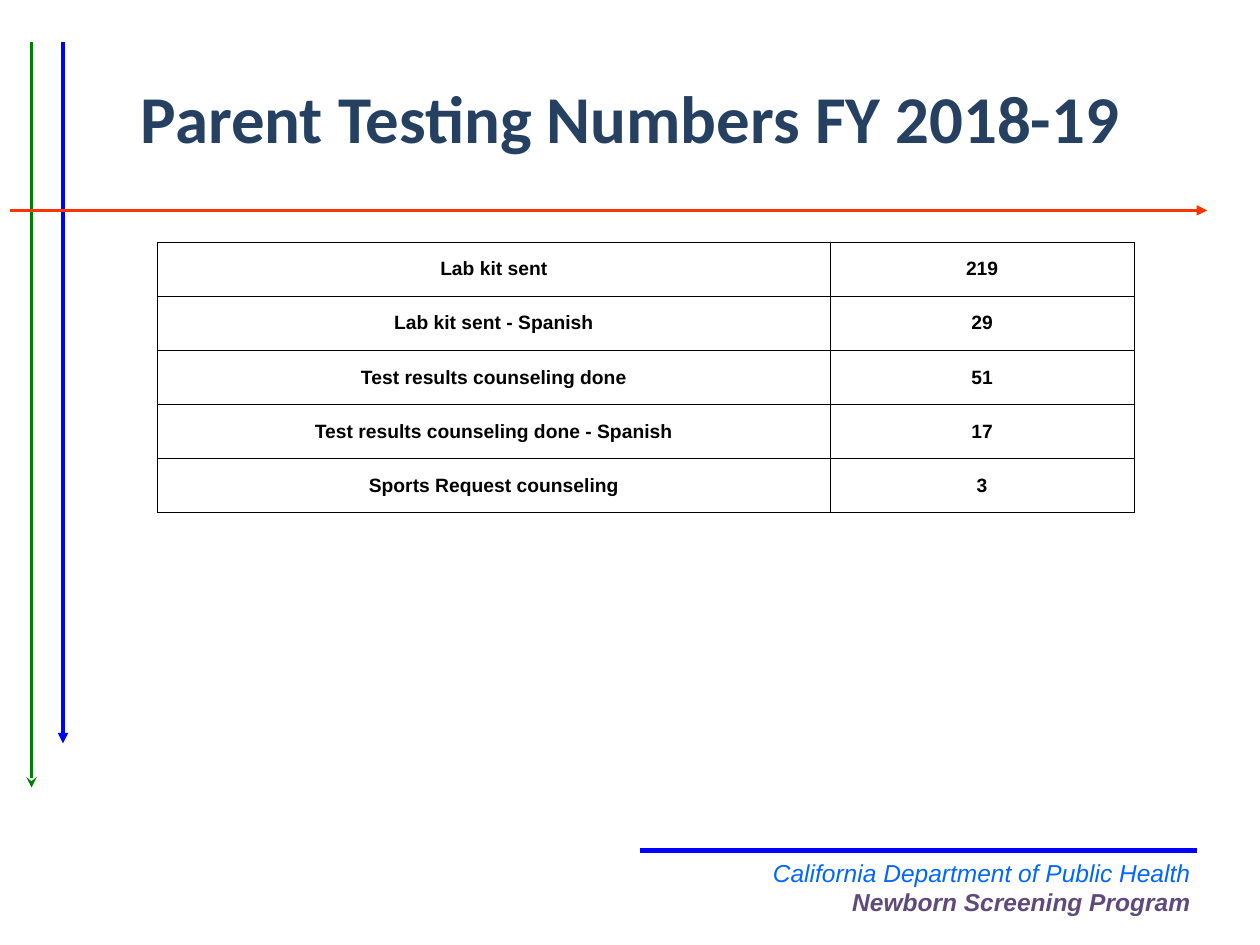
from dataclasses import dataclass

from lxml.etree import SubElement
from pptx import Presentation
from pptx.dml.color import RGBColor
from pptx.enum.shapes import MSO_CONNECTOR
from pptx.enum.text import MSO_ANCHOR, PP_ALIGN
from pptx.oxml.ns import qn
from pptx.util import Inches, Pt


@dataclass(frozen=True)
class Theme:
    heading_font: str = "Calibri"
    body_font: str = "Arial"
    title_size: float = 38.2
    footer_size: float = 14
    table_size: float = 11
    border_width: float = 0.5
    navy: str = "254061"
    green: str = "008000"
    blue: str = "0000FF"
    red: str = "FF3300"
    sky: str = "0066FF"
    purple: str = "604A7B"
    black: str = "000000"


class SlideBuilder:
    def __init__(self, slide, theme):
        self.slide = slide
        self.theme = theme

    def style(self, run, font, size, color, bold=False, italic=False):
        f = run.font
        f.name, f.size, f.bold, f.italic = font, Pt(size), bold, italic
        f.color.rgb = RGBColor.from_string(color)

    def set_margins(self, tf, inset):
        tf.margin_left = tf.margin_right = Inches(inset)
        tf.margin_top = tf.margin_bottom = Inches(inset)

    def line(self, x1, y1, x2, y2, color, width, arrow=None):
        cxn = self.slide.shapes.add_connector(
            MSO_CONNECTOR.STRAIGHT, Inches(x1), Inches(y1), Inches(x2), Inches(y2))
        cxn.line.width = Pt(width)
        cxn.line.color.rgb = RGBColor.from_string(color)
        if arrow:
            SubElement(cxn.line._get_or_add_ln(), qn("a:tailEnd"), type=arrow)
        SubElement(cxn._element.spPr, qn("a:effectLst"))

    def title(self, text, left, top, width, height):
        t = self.theme
        sp = self.slide.shapes.title
        sp.left, sp.top = Inches(left), Inches(top)
        sp.width, sp.height = Inches(width), Inches(height)
        tf = sp.text_frame
        tf.text = text
        tf.vertical_anchor = MSO_ANCHOR.MIDDLE
        self.set_margins(tf, 0.05)
        p = tf.paragraphs[0]
        p.alignment = PP_ALIGN.CENTER
        self.style(p.runs[0], t.heading_font, t.title_size, t.navy, bold=True)

    def footer(self, department, program, left, top, width, height):
        t = self.theme
        sp = self.slide.shapes.add_textbox(
            Inches(left), Inches(top), Inches(width), Inches(height))
        tf = sp.text_frame
        tf.word_wrap = True
        self.set_margins(tf, 0.05)
        p = tf.paragraphs[0]
        p.text = f"{department}\v{program}"
        p.alignment = PP_ALIGN.RIGHT
        first, second = p.runs
        self.style(first, t.body_font, t.footer_size, t.sky, italic=True)
        self.style(second, t.body_font, t.footer_size, t.purple, bold=True, italic=True)

    def border(self, cell):
        tc_pr = cell._tc.get_or_add_tcPr()
        for i, side in enumerate(("a:lnL", "a:lnR", "a:lnT", "a:lnB")):
            ln = SubElement(tc_pr, qn(side), w=str(Pt(self.theme.border_width)))
            tc_pr.insert(i, ln)
            fill = SubElement(ln, qn("a:solidFill"))
            SubElement(fill, qn("a:srgbClr"), val=self.theme.black)

    def table(self, rows, left, top, col_widths, row_height):
        t = self.theme
        table = self.slide.shapes.add_table(
            len(rows), len(col_widths), Inches(left), Inches(top),
            Inches(sum(col_widths)), Inches(row_height * len(rows))).table
        table.first_row = table.horz_banding = False
        for col, width in zip(table.columns, col_widths):
            col.width = Inches(width)
        for row, values in zip(table.rows, rows):
            row.height = Inches(row_height)
            for cell, value in zip(row.cells, values):
                cell.text = str(value)
                cell.fill.background()
                cell.vertical_anchor = MSO_ANCHOR.MIDDLE
                self.set_margins(cell, 0.01)
                self.border(cell)
                p = cell.text_frame.paragraphs[0]
                p.alignment = PP_ALIGN.CENTER
                self.style(p.runs[0], t.body_font, t.table_size, t.black, bold=True)


def main():
    prs = Presentation()
    prs.slide_width, prs.slide_height = Inches(10), Inches(7.5)
    theme = Theme()
    s = SlideBuilder(prs.slides.add_slide(prs.slide_layouts[5]), theme)

    s.line(0.25, 0.33, 0.25, 6.25, theme.green, 2, "stealth")
    s.line(0.5, 0.33, 0.5, 5.9, theme.blue, 2, "triangle")
    s.line(0.08, 1.67, 9.58, 1.67, theme.red, 2, "triangle")
    s.line(5.08, 6.75, 9.5, 6.75, theme.blue, 3)
    s.footer("California Department of Public Health", "Newborn Screening Program",
             5.08, 6.76, 4.42, 0.54)
    s.title("Parent Testing Numbers FY 2018-19", 0.5, 0.3, 9, 1.25)

    counts = [
        ("Lab kit sent", 219),
        ("Lab kit sent - Spanish", 29),
        ("Test results counseling done", 51),
        ("Test results counseling done - Spanish", 17),
        ("Sports Request counseling", 3),
    ]
    s.table(counts, 1.25, 1.92, (5.34, 2.41), 0.43)
    prs.save("out.pptx")


if __name__ == "__main__":
    main()
